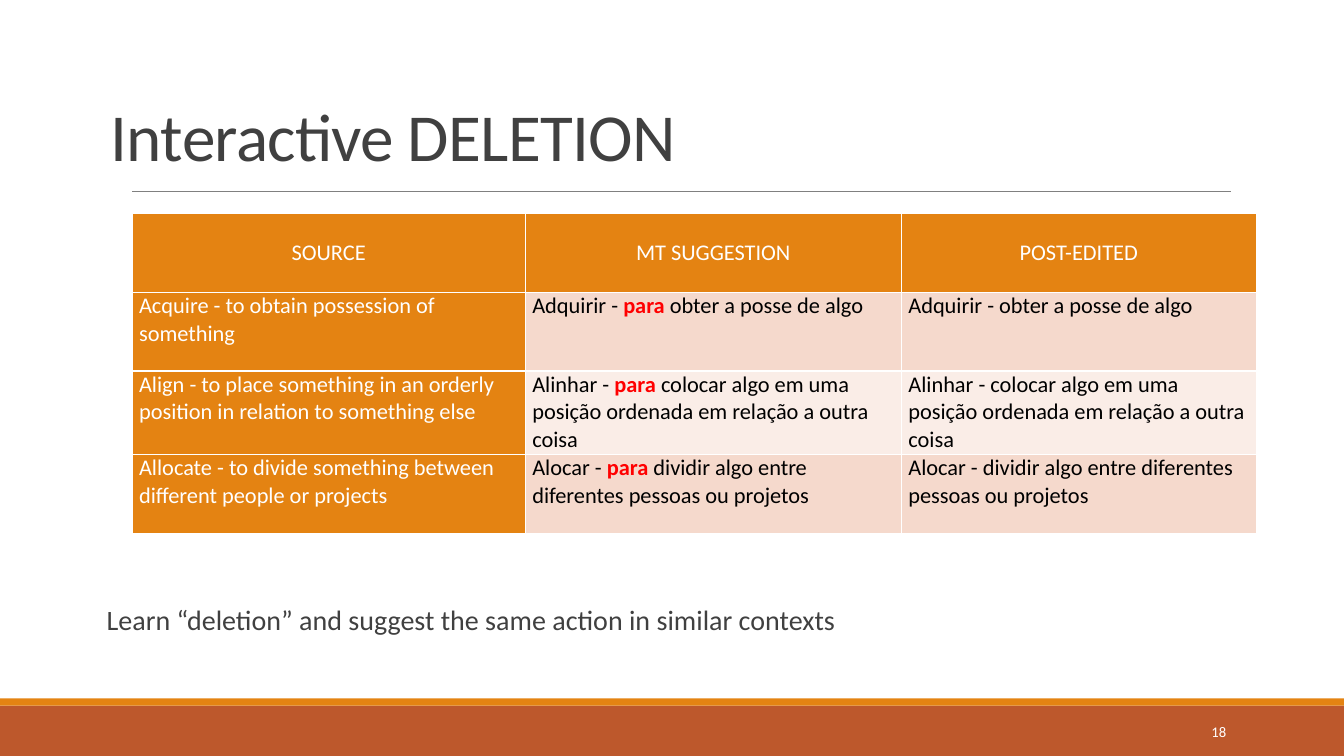
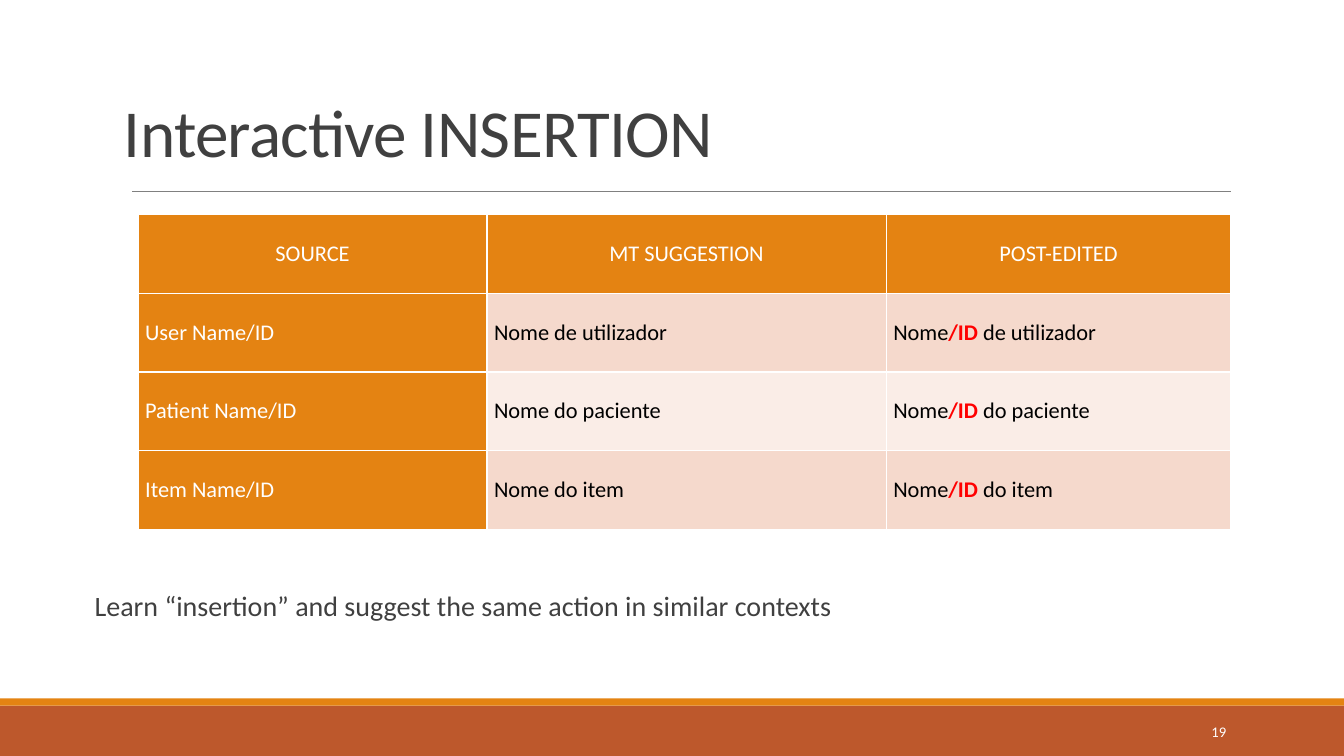
from lxml.etree import SubElement
from pptx import Presentation
from pptx.dml.color import RGBColor
from pptx.enum.shapes import MSO_CONNECTOR, MSO_SHAPE
from pptx.enum.text import MSO_ANCHOR as Anchor, PP_ALIGN as Align
from pptx.oxml.ns import qn
from pptx.util import Inches, Pt


def color(hex_code):
    return RGBColor.from_string(hex_code)


class Deck:
    """Holds the shared style and the slide being built."""

    FONT = "Calibri"
    ORANGE, RUST, GRAY = "E48312", "BD582C", "808080"
    TEXT, WHITE, BLACK, RED = "404040", "FFFFFF", "000000", "FF0000"
    BANDS = ("F5D9CC", "FAEDE7")
    HEADINGS = ("SOURCE", "MT SUGGESTION", "POST-EDITED")

    def __init__(self):
        self.prs = Presentation()
        self.prs.slide_width = Inches(13.33)
        self.prs.slide_height = Inches(7.5)
        self.slide = None

    def new_slide(self, number):
        self.slide = self.prs.slides.add_slide(self.prs.slide_layouts[6])
        self.band(7, 0.5, self.RUST)
        self.band(6.93, 0.07, self.ORANGE)
        self.rule(1.31, 12.21, 1.9)
        self.text(str(number), 10.83, 7.06, 1.43, 0.4, 10.5, self.WHITE, align=Align.RIGHT)

    def band(self, top, height, fill):
        band = self.slide.shapes.add_shape(
            MSO_SHAPE.RECTANGLE, 0, Inches(top), self.prs.slide_width, Inches(height))
        band.shadow.inherit = False
        band.fill.solid()
        band.fill.fore_color.rgb = color(fill)
        band.line.fill.background()

    def rule(self, left, right, top):
        rule = self.slide.shapes.add_connector(
            MSO_CONNECTOR.STRAIGHT, Inches(left), Inches(top), Inches(right), Inches(top))
        rule.line.color.rgb = color(self.GRAY)
        rule.line.width = Pt(0.5)
        SubElement(rule._element.spPr, qn("a:effectLst"))

    def set_font(self, font, size, ink):
        font.name = self.FONT
        font.size = Pt(size)
        font.color.rgb = color(ink)

    def text(self, words, left, top, width, height, size, ink,
             align=Align.LEFT, anchor=Anchor.MIDDLE):
        box = self.slide.shapes.add_textbox(
            Inches(left), Inches(top), Inches(width), Inches(height))
        frame = box.text_frame
        frame.word_wrap = True
        frame.vertical_anchor = anchor
        paragraph = frame.paragraphs[0]
        paragraph.text = words
        paragraph.alignment = align
        self.set_font(paragraph.font, size, ink)
        return paragraph

    def title(self, words, left, top):
        title = self.text(words, left, top, 11.33, 1.75, 48, self.TEXT, anchor=Anchor.BOTTOM)
        title.line_spacing = 0.85
        title.runs[0]._r.get_or_add_rPr().set("spc", "-50")

    def note(self, words, left, top):
        self.text(words, left, top, 11.5, 0.5, 20, self.TEXT)

    def comparison(self, left, top, widths, heights, rows, anchor):
        """Draw the translation table; *stars* mark the edited words."""
        table = self.slide.shapes.add_table(
            len(heights), len(widths), Inches(left), Inches(top),
            Inches(sum(widths)), Inches(sum(heights))).table
        table.first_row = table.horz_banding = False
        for column, width in zip(table.columns, widths):
            column.width = Inches(width)
        for row, height in zip(table.rows, heights):
            row.height = Inches(height)
        for r, entries in enumerate((self.HEADINGS, *rows)):
            for c, entry in enumerate(entries):
                cell = table.cell(r, c)
                accent = r == 0 or c == 0
                self.cell_style(cell, self.ORANGE if accent else self.BANDS[(r - 1) % 2])
                cell.vertical_anchor = anchor if r else Anchor.MIDDLE
                paragraph = cell.text_frame.paragraphs[0]
                paragraph.alignment = Align.LEFT if r else Align.CENTER
                self.set_font(paragraph.font, 16, self.WHITE if accent else self.BLACK)
                self.marked_runs(paragraph, entry)

    def marked_runs(self, paragraph, entry):
        for i, part in enumerate(entry.split("*")):
            run = paragraph.add_run()
            run.text = part
            if i % 2:
                run.font.bold = True
                run.font.color.rgb = color(self.RED)

    def cell_style(self, cell, fill):
        cell.margin_left = cell.margin_right = Inches(0.07)
        cell.margin_top = cell.margin_bottom = 0
        # Borders come before the fill in the cell properties
        properties = cell._tc.get_or_add_tcPr()
        for side in "LRTB":
            border = SubElement(properties, qn(f"a:ln{side}"), w=str(Pt(1)))
            SubElement(SubElement(border, qn("a:solidFill")), qn("a:srgbClr"), val=self.WHITE)
        cell.fill.solid()
        cell.fill.fore_color.rgb = color(fill)


def main():
    deck = Deck()

    # Deletion
    deck.new_slide(18)
    deck.title("Interactive DELETION", 1, 0.04)
    deck.comparison(1.31, 2.12, (3.9, 3.73, 3.52), (0.78, 0.78, 0.83, 0.78), (
        ("Acquire - to obtain possession of something",
         "Adquirir - *para* obter a posse de algo",
         "Adquirir - obter a posse de algo"),
        ("Align - to place something in an orderly position in relation to something else",
         "Alinhar - *para* colocar algo em uma posição ordenada em relação a outra coisa",
         "Alinhar - colocar algo em uma posição ordenada em relação a outra coisa"),
        ("Allocate - to divide something between different people or projects",
         "Alocar - *para* dividir algo entre diferentes pessoas ou projetos",
         "Alocar - dividir algo entre diferentes pessoas ou projetos"),
    ), Anchor.TOP)
    deck.note("Learn “deletion” and suggest the same action in similar contexts", 0.96, 5.89)

    # Insertion
    deck.new_slide(19)
    deck.title("Interactive INSERTION", 1.13, 0)
    deck.comparison(1.37, 2.13, (3.46, 3.96, 3.42), (0.78,) * 4, (
        ("User Name/ID", "Nome de utilizador", "Nome*/ID* de utilizador"),
        ("Patient Name/ID", "Nome do paciente", "Nome*/ID* do paciente"),
        ("Item Name/ID", "Nome do item", "Nome*/ID* do item"),
    ), Anchor.MIDDLE)
    deck.note("Learn “insertion” and suggest the same action in similar contexts", 0.84, 5.76)

    deck.prs.save("out.pptx")


if __name__ == "__main__":
    main()
